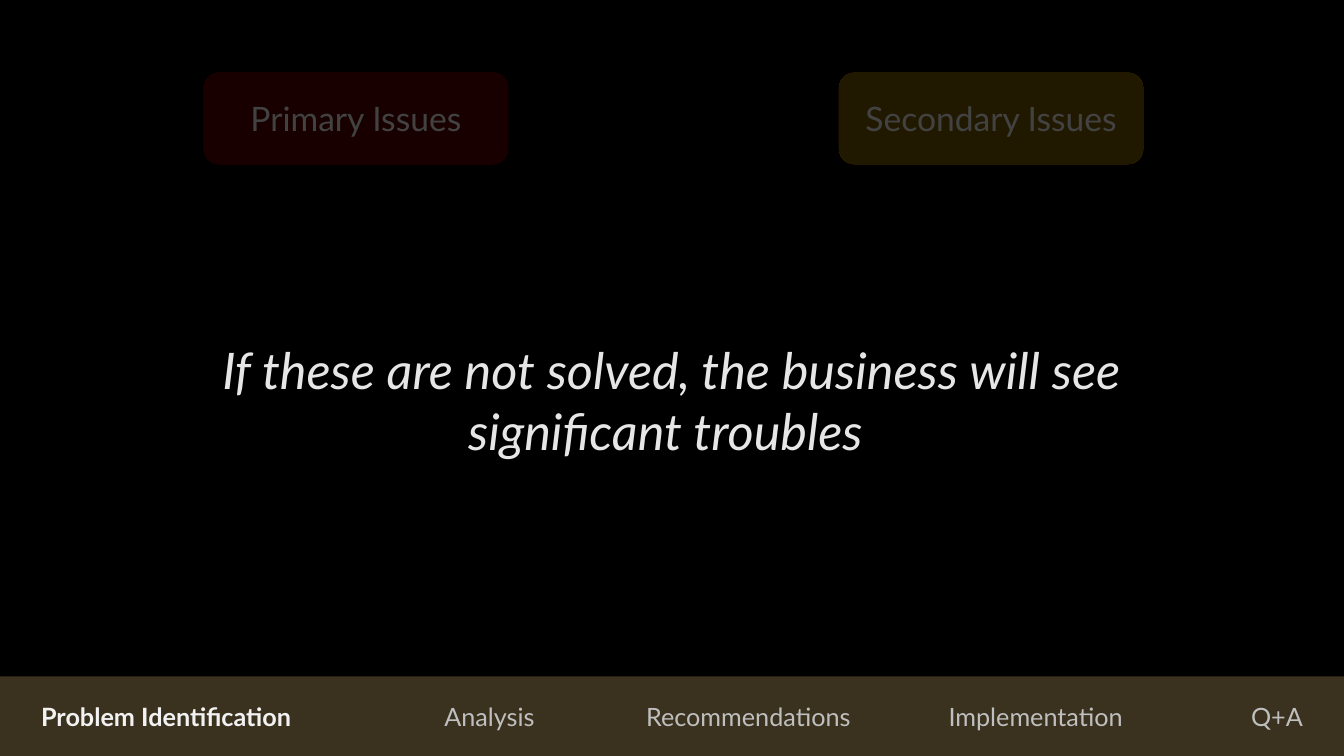
from lxml import etree
from pptx import Presentation
from pptx import util as u
from pptx.dml.color import RGBColor
from pptx.enum import shapes, text
from pptx.oxml.ns import qn

BLACK = RGBColor(0x00, 0x00, 0x00)
WHITE = RGBColor(0xFF, 0xFF, 0xFF)
TAN = RGBColor(0xB1, 0x98, 0x5D)
RED = RGBColor(0xC0, 0x00, 0x00)
GOLD = RGBColor(0xFF, 0xC0, 0x00)
PALE = RGBColor(0xF2, 0xF2, 0xF2)
DIM = RGBColor(0xBF, 0xBF, 0xBF)
SOFT = RGBColor(0xE7, 0xE6, 0xE6)


class Deck:
    font = "Lato"

    def __init__(self, prs):
        self.slide = prs.slides.add_slide(prs.slide_layouts[6])
        fill = self.slide.background.fill
        fill.solid()
        fill.fore_color.rgb = BLACK

    def box(self, place, color, alpha=100):
        kind = shapes.MSO_SHAPE.ROUNDED_RECTANGLE
        shape = self.slide.shapes.add_shape(kind, *map(u.Inches, place))
        shape.shadow.inherit = False
        shape.line.fill.background()
        shape.fill.solid()
        shape.fill.fore_color.rgb = color
        if alpha < 100:
            tint = shape.fill._xPr.find(".//" + qn("a:srgbClr"))
            etree.SubElement(tint, qn("a:alpha"), val=str(alpha * 1000))
        return shape

    def label(self, shape, runs, align=text.PP_ALIGN.CENTER, tabs=()):
        frame = shape.text_frame
        frame.word_wrap = True
        frame.vertical_anchor = text.MSO_ANCHOR.MIDDLE
        para = frame.paragraphs[0]
        para.alignment = align
        if tabs:
            stops = etree.SubElement(para._p.get_or_add_pPr(), qn("a:tabLst"))
            for stop in tabs:
                etree.SubElement(stops, qn("a:tab"), pos=str(u.Inches(stop)), algn="l")
        for words, size, color, style in runs:
            run = para.add_run()
            run.text = words
            run.font.color.rgb = color
            form = {"name": self.font, "size": u.Pt(size), **style}
            for key, value in form.items():
                setattr(run.font, key, value)

    def footer(self, active, rest, tabs):
        bar = self.box((-0.32, 6.71, 13.96, 0.79), TAN, 33)
        bar.text_frame.margin_left = u.Inches(0.69)
        runs = [(active, 18, PALE, {"bold": True})]
        runs += [("\t" + name, 18, DIM, {"bold": False}) for name in rest]
        self.label(bar, runs, text.PP_ALIGN.LEFT, tabs)

    def card(self, left, title, color):
        place = (left, 0.72, 3.02, 0.91)
        self.label(self.box(place, color, 50), [(title, 24, WHITE, {})])
        self.box(place, BLACK, 74)

    def quote(self, words):
        panel = self.box((1.76, 2.42, 9.8, 3.09), BLACK)
        self.label(panel, [(words, 36, SOFT, {"italic": True})])


def main():
    prs = Presentation()
    prs.slide_width = u.Inches(13.33)
    prs.slide_height = u.Inches(7.5)
    deck = Deck(prs)
    deck.footer(
        "Problem Identification",
        ("Analysis", "Recommendations", "Implementation", "Q+A"),
        (4, 6, 9, 12),
    )
    deck.card(2.02, "Primary Issues", RED)
    deck.card(8.32, "Secondary Issues", GOLD)
    deck.quote("If these are not solved, the business will see significant troubles ")
    prs.save("out.pptx")


if __name__ == "__main__":
    main()
